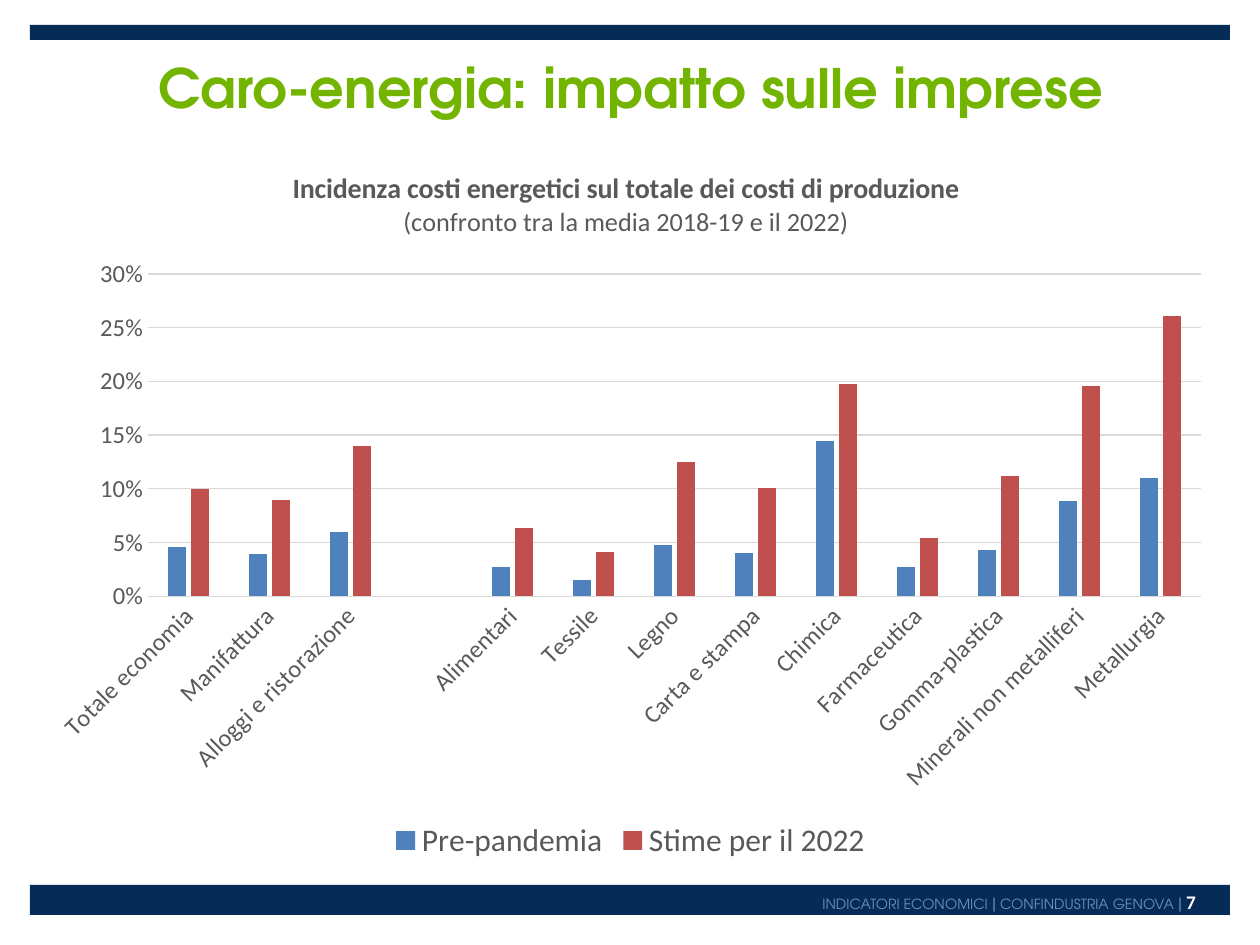
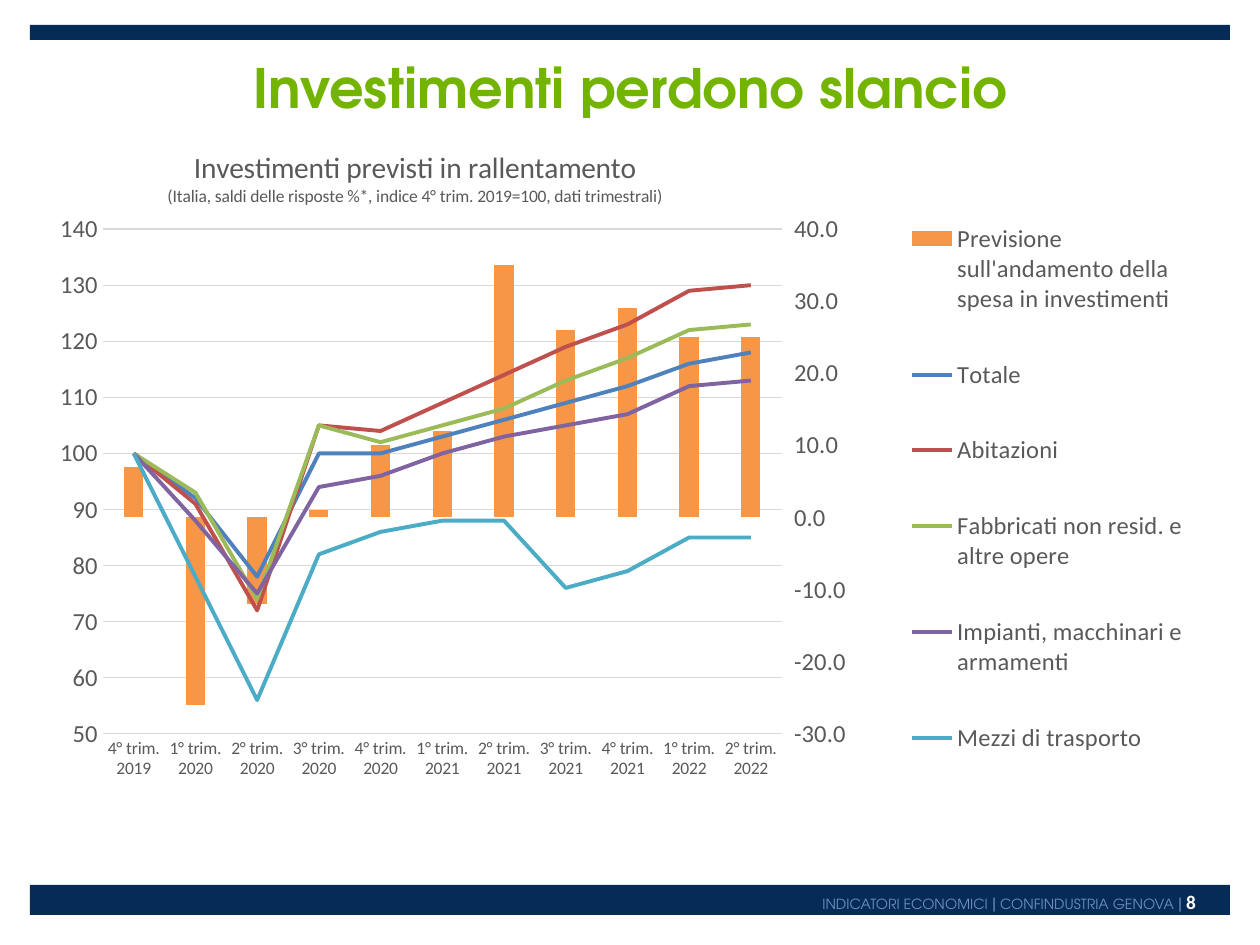
from copy import deepcopy

from pptx import Presentation
from pptx.chart.axis import CategoryAxis, ValueAxis
from pptx.chart.data import CategoryChartData
from pptx.dml.color import RGBColor
from pptx.enum.chart import (XL_CHART_TYPE, XL_LEGEND_POSITION, XL_MARKER_STYLE,
                             XL_TICK_LABEL_POSITION, XL_TICK_MARK)
from pptx.enum.shapes import MSO_SHAPE
from pptx.enum.text import MSO_ANCHOR, PP_ALIGN
from pptx.oxml import parse_xml
from pptx.oxml.ns import nsdecls
from pptx.util import Pt

RECTANGLE = MSO_SHAPE.RECTANGLE
CENTER, RIGHT, MIDDLE = PP_ALIGN.CENTER, PP_ALIGN.RIGHT, MSO_ANCHOR.MIDDLE
COLUMNS = XL_CHART_TYPE.COLUMN_CLUSTERED
LEGEND_BOTTOM, LEGEND_RIGHT = XL_LEGEND_POSITION.BOTTOM, XL_LEGEND_POSITION.RIGHT
NO_TICK, NO_MARKER = XL_TICK_MARK.NONE, XL_MARKER_STYLE.NONE
LABELS_HIGH = XL_TICK_LABEL_POSITION.HIGH

PX = 7257  # EMU in one px, 126 px to the inch
NAVY, GREEN, FOOTER_BLUE, WHITE = "062B57", "73B400", "6D90BE", "FFFFFF"
GREY, GRID = "595959", "D9D9D9"
BLUE, RED, OLIVE, PURPLE, AQUA, ORANGE = (
    "4F81BD", "C0504D", "9BBB59", "8064A2", "4BACC6", "F79646")
HEAD_FONT, BODY_FONT = "TeX Gyre Adventor", "Calibri"


def rgb(color):
    return RGBColor.from_string(color)


def add_span(para, text, size, color=GREY, font=BODY_FONT, bold=False):
    span = para.add_run()
    span.text = text
    span.font.size = Pt(size)
    span.font.name = font
    span.font.bold = bold
    span.font.color.rgb = rgb(color)


# Content of the two pages; layouts are fractions of the chart frame
quarters = ["4° trim. 2019"]
quarters += [f"{quarter}° trim. {year}" for year in (2020, 2021) for quarter in (1, 2, 3, 4)]
quarters += ["1° trim. 2022", "2° trim. 2022"]

contents = [
    dict(
        number=7,
        title="Caro-energia: impatto sulle imprese",
        frame=(35, 145, 1191, 721),
        heading=[("Incidenza costi energetici sul totale dei costi di produzione", 16, True),
                 ("(confronto tra la media 2018-19 e il 2022)", 15, False)],
        categories=["Totale economia", "Manifattura", "Alloggi e ristorazione", "",
                    "Alimentari", "Tessile", "Legno", "Carta e stampa", "Chimica",
                    "Farmaceutica", "Gomma-plastica", "Minerali non metalliferi",
                    "Metallurgia"],
        series=[
            ("Pre-pandemia", BLUE, [0.046, 0.039, 0.06, None, 0.027, 0.015, 0.048, 0.04,
                                    0.144, 0.027, 0.043, 0.089, 0.11]),
            ("Stime per il 2022", RED, [0.1, 0.09, 0.14, None, 0.063, 0.041, 0.125, 0.101,
                                        0.198, 0.054, 0.112, 0.196, 0.261]),
        ],
        scale=(0, 0.3, 0.05), number_format="0%", overlap=-27,
        category_size=14, category_turn=-45,
        legend=LEGEND_BOTTOM, legend_size=18,
        layouts={"title": (0.213, 0.029),
                 "plotArea": (0.095, 0.179, 0.884, 0.447)},
    ),
    dict(
        number=8,
        title="Investimenti perdono slancio",
        frame=(35, 129, 1191, 701),
        heading=[("Investimenti previsti in rallentamento", 16.8, False),
                 ("(Italia, saldi delle risposte %*, indice 4° trim. 2019=100, dati trimestrali)",
                  10, False)],
        categories=quarters,
        series=[
            ("Previsione sull'andamento della spesa in investimenti", ORANGE,
             [7, -26, -12, 1, 10, 12, 35, 26, 29, 25, 25]),
            ("Totale", BLUE, [100, 92, 78, 100, 100, 103, 106, 109, 112, 116, 118]),
            ("Abitazioni", RED, [100, 91, 72, 105, 104, 109, 114, 119, 123, 129, 130]),
            ("Fabbricati non resid. e altre opere", OLIVE,
             [100, 93, 74, 105, 102, 105, 108, 113, 117, 122, 123]),
            ("Impianti, macchinari e armamenti", PURPLE,
             [100, 88, 75, 94, 96, 100, 103, 105, 107, 112, 113]),
            ("Mezzi di trasporto", AQUA, [100, 78, 56, 82, 86, 88, 88, 76, 79, 85, 85]),
        ],
        scale=(50, 140, 10), number_format="0", overlap=0,
        category_size=10, category_turn=0,
        legend=LEGEND_RIGHT, legend_size=14,
        layouts={"title": (0.108, 0.023),
                 "plotArea": (0.057, 0.143, 0.57, 0.72),
                 "legend": (0.725, 0.07, 0.25, 0.885)},
    ),
]

deck = Presentation()
deck.slide_width, deck.slide_height = 1260 * PX, 945 * PX
charts = []

for content in contents:
    page = deck.slides.add_slide(deck.slide_layouts[6])

    # Navy bands
    for top, height in ((885, 30), (25, 15)):
        band = page.shapes.add_shape(RECTANGLE, 30 * PX, top * PX, 1200 * PX, height * PX)
        band.shadow.inherit = False
        band.fill.solid()
        band.fill.fore_color.rgb = rgb(NAVY)
        band.line.fill.background()

    # Footer with page number
    box = page.shapes.add_textbox(480 * PX, 887 * PX, 716 * PX, 35 * PX)
    frame = box.text_frame
    frame.word_wrap = True
    frame.margin_left = frame.margin_right = frame.margin_top = frame.margin_bottom = 0
    para = frame.paragraphs[0]
    para.alignment = RIGHT
    para.line_spacing = 1.15
    for text, size in (("INDICATORI ECONOMICI ", 8), ("|", 10),
                       (" CONFINDUSTRIA GENOVA ", 8), ("|", 10), (" ", 8)):
        add_span(para, text, size, color=FOOTER_BLUE, font=HEAD_FONT)
    add_span(para, str(content["number"]), 11, color=WHITE, bold=True)

    # Page title
    box = page.shapes.add_textbox(35 * PX, 46 * PX, 1191 * PX, 81 * PX)
    box.text_frame.word_wrap = True
    box.text_frame.vertical_anchor = MIDDLE
    para = box.text_frame.paragraphs[0]
    para.alignment = CENTER
    add_span(para, content["title"], 31, color=GREEN, font=HEAD_FONT, bold=True)

    # Column chart
    data = CategoryChartData()
    data.categories = content["categories"]
    for name, color, values in content["series"]:
        data.add_series(name, values)
    left, top, width, height = [length * PX for length in content["frame"]]
    chart = page.shapes.add_chart(COLUMNS, left, top, width, height, data).chart
    charts.append(chart)
    chart.font.name = BODY_FONT
    chart.font.size = Pt(14)
    chart.font.color.rgb = rgb(GREY)

    plot = chart.plots[0]
    plot.vary_by_categories = False
    plot.gap_width = 219
    plot.overlap = content["overlap"]
    for series, (name, color, values) in zip(plot.series, content["series"]):
        series.invert_if_negative = False
        series.format.fill.solid()
        series.format.fill.fore_color.rgb = rgb(color)

    # Chart heading
    chart.has_title = True
    frame = chart.chart_title.text_frame
    for index, (text, size, bold) in enumerate(content["heading"]):
        para = frame.add_paragraph() if index else frame.paragraphs[0]
        para.alignment = CENTER
        add_span(para, text, size, bold=bold)

    # Axes
    category_axis, value_axis = chart.category_axis, chart.value_axis
    category_axis.format.line.color.rgb = rgb(GRID)
    category_axis.format.line.width = Pt(0.75)
    value_axis.format.line.fill.background()
    value_axis.major_gridlines.format.line.color.rgb = rgb(GRID)
    value_axis.major_gridlines.format.line.width = Pt(0.75)
    value_axis.minimum_scale, value_axis.maximum_scale, value_axis.major_unit = content["scale"]
    value_axis.tick_labels.number_format = content["number_format"]
    value_axis.tick_labels.number_format_is_linked = False
    for axis, size in ((category_axis, content["category_size"]), (value_axis, 14)):
        axis.major_tick_mark = axis.minor_tick_mark = NO_TICK
        axis.tick_labels.font.size = Pt(size)
        axis.tick_labels.font.name = BODY_FONT
        axis.tick_labels.font.color.rgb = rgb(GREY)
    turn = chart.element.xpath(".//c:catAx/c:txPr/a:bodyPr")[0]
    turn.set("rot", str(content["category_turn"] * 60000))

    # Legend
    chart.has_legend = True
    chart.legend.position = content["legend"]
    chart.legend.include_in_layout = False
    chart.legend.font.size = Pt(content["legend_size"])
    chart.legend.font.name = BODY_FONT
    chart.legend.font.color.rgb = rgb(GREY)

    # Fixed places of heading, plot and legend
    for part, fractions in content["layouts"].items():
        holder = chart.element.xpath(f"c:chart/c:{part}")[0]
        for old_layout in holder.xpath("c:layout"):
            holder.remove(old_layout)
        target = '<c:layoutTarget val="inner"/>' if part == "plotArea" else ""
        modes = '<c:xMode val="edge"/><c:yMode val="edge"/>'
        sizes = "".join(f'<c:{key} val="{value}"/>' for key, value in zip("xywh", fractions))
        layout = parse_xml(f"<c:layout {nsdecls('c')}><c:manualLayout>{target}{modes}{sizes}"
                           "</c:manualLayout></c:layout>")
        holder.insert(0 if part == "plotArea" else 1, layout)

# Investments: every series but the first becomes a line
chart = charts[1]
columns = chart.element.xpath(".//c:barChart")[0]
line_axes = chart.element.xpath(".//c:catAx | .//c:valAx")
axis_ids = [axis.xpath("c:axId")[0].get("val") for axis in line_axes]
lines = parse_xml(
    f'<c:lineChart {nsdecls("c")}><c:grouping val="standard"/><c:varyColors val="0"/>'
    '<c:marker val="1"/>' + "".join(f'<c:axId val="{axis_id}"/>' for axis_id in axis_ids)
    + "</c:lineChart>")
columns.addnext(lines)
line_marker = lines.xpath("c:marker")[0]
for element in columns.xpath("c:ser")[1:]:
    element.remove(element.xpath("c:invertIfNegative")[0])
    element.remove(element.xpath("c:spPr")[0])
    line_marker.addprevious(element)
for series, (name, color, values) in zip(chart.plots[1].series, contents[1]["series"][1:]):
    series.format.line.color.rgb = rgb(color)
    series.format.line.width = Pt(2.25)
    series.marker.style = NO_MARKER
    series.smooth = False

# Columns get their own axes, with the values on the right
new_ids = dict(zip(axis_ids, ("5001", "5002")))
category_copy, value_copy = [deepcopy(axis) for axis in line_axes]
line_axes[-1].addnext(value_copy)
value_copy.addnext(category_copy)
for element in (columns, value_copy, category_copy):
    for reference in element.xpath("c:axId | c:crossAx"):
        reference.set("val", new_ids[reference.get("val")])
CategoryAxis(category_copy).visible = False
value_copy.xpath("c:axPos")[0].set("val", "r")
value_copy.xpath("c:crosses")[0].set("val", "max")
right_axis = ValueAxis(value_copy)
right_axis.tick_label_position = LABELS_HIGH
right_axis.has_major_gridlines = False
right_axis.minimum_scale, right_axis.maximum_scale, right_axis.major_unit = -30, 40, 10
right_axis.tick_labels.number_format = "0.0"

deck.save("out.pptx")
